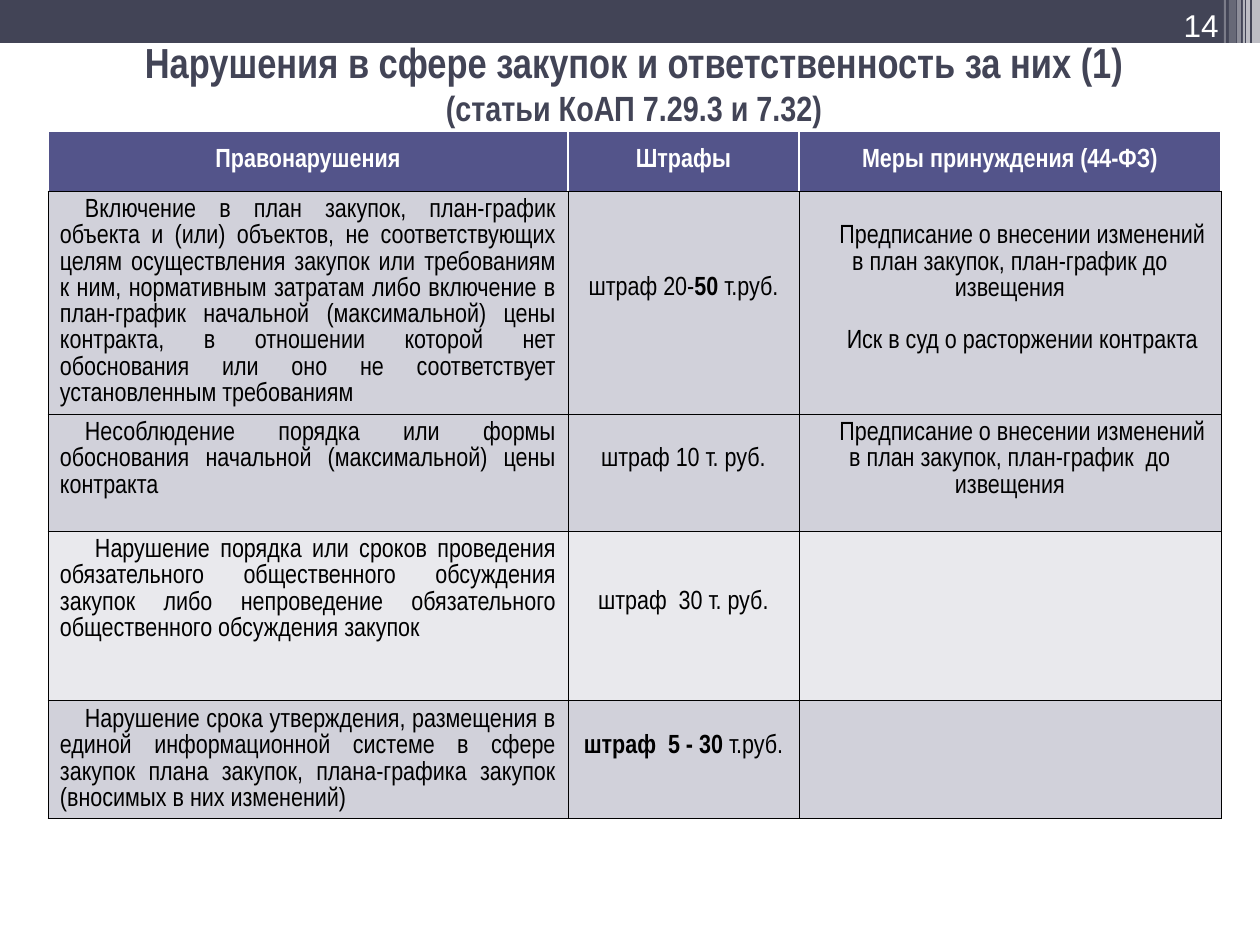
"""Build the slide on procurement violations and the penalties for them."""
import pptx
import pptx.dml.color
import pptx.enum.shapes
import pptx.enum.text
import pptx.oxml
import pptx.util

COLORS = {"dark": "424456", "header": "53548A", "band": "D1D1DA",
          "light": "E9E9ED", "white": "FFFFFF", "black": "000000"}
ALIGN = pptx.enum.text.PP_ALIGN
ANCHOR = pptx.enum.text.MSO_ANCHOR
NARROW = "Arial Narrow"
LINE_PT = 15
LINE_PX = 26

TITLE = [("Нарушения в сфере закупок и ответственность за них (1)", 24),
         ("(статьи КоАП 7.29.3 и 7.32)", 20)]
PAGE = "14"
STRIPES = [(1252, 8, 86, 65), (1246, 4, 86, 65), (1243, 2, 86, 60),
           (1237, 4, 86, 40), (1229, 7, 81, 20), (1224, 2, 81, 30)]
HEADERS = ["Правонарушения", "Штрафы", "Меры принуждения (44-ФЗ)"]
COLUMNS = [520, 231, 422]
HEADER_HEIGHT = 60
ROWS = [
    {"height": 223, "fill": "band", "indent": 25, "fine_drop": 3, "measure_drop": 1,
     "offence": "Включение в план закупок, план-график объекта и (или) объектов, "
                "не соответствующих целям осуществления закупок или требованиям к ним, "
                "нормативным затратам либо включение в план-график начальной "
                "(максимальной) цены контракта, в отношении которой нет обоснования "
                "или оно не соответствует установленным требованиям",
     "fine": [("штраф 20-", False), ("50 ", True), ("т.руб.", False)],
     "measures": ["Предписание о внесении изменений в план закупок, план-график до извещения",
                  "Иск в суд о расторжении контракта"]},
    {"height": 117, "fill": "band", "indent": 25, "fine_drop": 1, "measure_drop": 0,
     "offence": "Несоблюдение порядка или формы обоснования начальной "
                "(максимальной) цены контракта",
     "fine": [("штраф 10 т. руб.", False)],
     "measures": ["Предписание о внесении изменений в план закупок, план-график  до извещения"]},
    {"height": 170, "fill": "light", "indent": 35, "fine_drop": 2, "measure_drop": 0,
     "offence": "Нарушение порядка или сроков проведения обязательного общественного "
                "обсуждения закупок либо непроведение обязательного общественного "
                "обсуждения закупок",
     "fine": [("штраф  30 т. руб.", False)], "measures": []},
    {"height": 118, "fill": "band", "indent": 25, "fine_drop": 1, "measure_drop": 0,
     "offence": "Нарушение срока утверждения, размещения в единой информационной системе "
                "в сфере закупок плана закупок, плана-графика закупок "
                "(вносимых в них изменений)",
     "fine": [("штраф  5 - 30 ", True), ("т.руб.", False)], "measures": []},
]


def px(length):
    return pptx.util.Emu(round(length * 914400 / 126))


def rgb(name):
    return pptx.dml.color.RGBColor.from_string(COLORS[name])


def child(parent, tag, **attributes):
    element = pptx.oxml.parse_xml(
        f'<a:{tag} xmlns:a="http://schemas.openxmlformats.org/drawingml/2006/main"/>')
    for key, value in attributes.items():
        element.set(key, str(value))
    parent.append(element)
    return element


def add_bar(slide, left, width, height, color, opacity=100):
    bar = slide.shapes.add_shape(pptx.enum.shapes.MSO_SHAPE.RECTANGLE,
                                 px(left), 0, px(width), px(height))
    bar.shadow.inherit = False
    bar.line.fill.background()
    bar.fill.solid()
    bar.fill.fore_color.rgb = rgb(color)
    if opacity < 100:
        tint = bar.fill._xPr.find(".//" + pptx.oxml.ns.qn("a:srgbClr"))
        child(tint, "alpha", val=opacity * 1000)


def style(paragraph, size, color, align, bold=None, font=NARROW):
    paragraph.alignment = align
    paragraph.font.size = pptx.util.Pt(size)
    paragraph.font.name = font
    paragraph.font.color.rgb = rgb(color)
    paragraph.font.bold = bold


def paint_cell(cell, fill, edge="black", width=0.5):
    properties = cell._tc.get_or_add_tcPr()
    for side in ("lnL", "lnR", "lnT", "lnB"):
        color, points = ("black", 0.5) if side == "lnB" else (edge, width)
        line = child(properties, side, w=int(pptx.util.Pt(points)))
        child(child(line, "solidFill"), "srgbClr", val=COLORS[color])
    cell.fill.solid()
    cell.fill.fore_color.rgb = rgb(fill)


def write_cell(cell, paragraphs, align, indent=0, drop=0):
    cell.margin_left = cell.margin_right = px(12)
    cell.margin_top, cell.margin_bottom = px(6 + drop * LINE_PX), px(6)
    for number, runs in enumerate(paragraphs):
        frame = cell.text_frame
        paragraph = frame.add_paragraph() if number else frame.paragraphs[0]
        style(paragraph, 15, "black", align)
        paragraph.line_spacing = pptx.util.Pt(LINE_PT)
        if number:
            paragraph.space_before = pptx.util.Pt(LINE_PT)
        if indent:
            paragraph._p.get_or_add_pPr().set("indent", str(px(indent)))
        for text, bold in runs:
            run = paragraph.add_run()
            run.text = text
            run.font.bold = bold


def add_penalties(slide):
    heights = [HEADER_HEIGHT] + [row["height"] for row in ROWS]
    table = slide.shapes.add_table(len(heights), len(COLUMNS), px(48), px(131),
                                   px(sum(COLUMNS)), px(sum(heights))).table
    for column, width in zip(table.columns, COLUMNS):
        column.width = px(width)
    for line, height in zip(table.rows, heights):
        line.height = px(height)
    for index, header in enumerate(HEADERS):
        cell = table.cell(0, index)
        paint_cell(cell, "header", "white", 1)
        cell.margin_left = cell.margin_right = cell.margin_top = cell.margin_bottom = 0
        cell.vertical_anchor = ANCHOR.MIDDLE
        cell.text = header
        style(cell.text_frame.paragraphs[0], 15, "white", ALIGN.CENTER, True)
    for number, row in enumerate(ROWS, 1):
        offence, fine, measures = (table.cell(number, i) for i in range(3))
        for cell in (offence, fine, measures):
            paint_cell(cell, row["fill"])
        write_cell(offence, [[(row["offence"], False)]], ALIGN.JUSTIFY, row["indent"])
        write_cell(fine, [row["fine"]], ALIGN.CENTER, drop=row["fine_drop"])
        write_cell(measures, [[(text, False)] for text in row["measures"]],
                   ALIGN.CENTER, 25, row["measure_drop"])


def main():
    deck = pptx.Presentation()
    deck.slide_width, deck.slide_height = px(1260), px(945)
    slide = deck.slides.add_slide(deck.slide_layouts[5])
    add_bar(slide, 0, 1260, 43, "dark")
    for left, width, height, opacity in STRIPES:
        add_bar(slide, left, width, height, "white", opacity)
    add_penalties(slide)

    title = slide.shapes.title
    title.left, title.top, title.width, title.height = px(14), px(48), px(1240), px(69)
    heading = title.text_frame
    heading.auto_size = pptx.enum.text.MSO_AUTO_SIZE.NONE
    heading.vertical_anchor = ANCHOR.MIDDLE
    heading.text = "\n".join(text for text, size in TITLE)
    for paragraph, (text, size) in zip(heading.paragraphs, TITLE):
        style(paragraph, size, "dark", ALIGN.CENTER, True)

    page = slide.shapes.add_textbox(px(1012), 0, px(219), px(43)).text_frame
    page.word_wrap = True
    page.text = PAGE
    style(page.paragraphs[0], 18, "white", ALIGN.RIGHT, font="Arial")
    deck.save("out.pptx")


if __name__ == "__main__":
    main()
